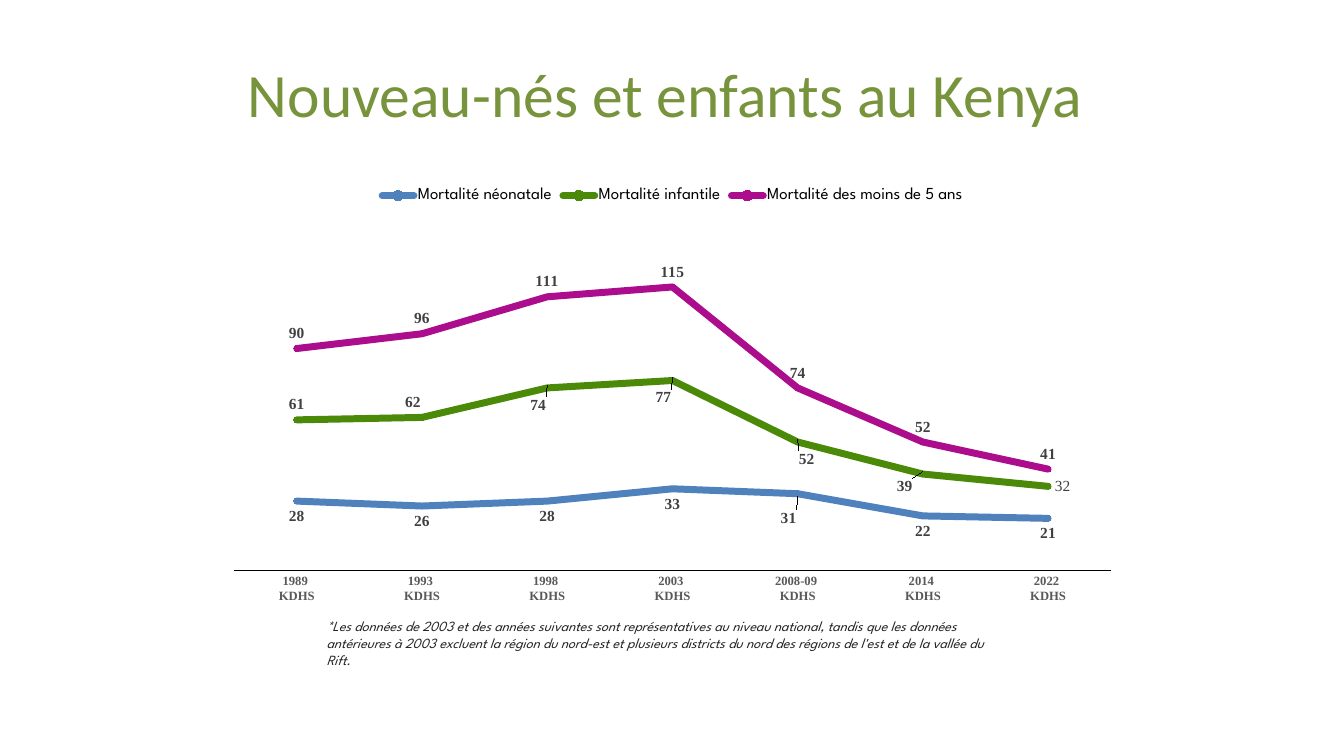
from dataclasses import dataclass, field

from lxml.etree import SubElement
from pptx import Presentation
from pptx.chart.data import CategoryChartData
from pptx.chart.series import LineSeries
from pptx.dml.color import RGBColor
from pptx.enum.chart import (
    XL_CHART_TYPE, XL_LABEL_POSITION, XL_LEGEND_POSITION, XL_MARKER_STYLE, XL_TICK_MARK,
)
from pptx.enum.text import MSO_ANCHOR, PP_ALIGN
from pptx.oxml import parse_xml
from pptx.oxml.ns import nsdecls, qn
from pptx.text.text import Font, TextFrame
from pptx.util import Inches, Pt

BLACK = RGBColor(0x00, 0x00, 0x00)
TITLE_GREEN = RGBColor(0x77, 0x93, 0x3C)
NOTE_GREY = RGBColor(0x24, 0x24, 0x24)
LABEL_GREY = RGBColor(0x40, 0x40, 0x40)
AXIS_GREY = RGBColor(0x59, 0x59, 0x59)
BLUE = RGBColor(0x4F, 0x81, 0xBD)
GREEN = RGBColor(0x4B, 0x8A, 0x08)
PURPLE = RGBColor(0xAB, 0x0D, 0x8D)

SANS = "League Spartan"
SERIF = "Times New Roman"
SURVEY_YEARS = ("1989", "1993", "1998", "2003", "2008-09", "2014", "2022")
FOOTNOTE = (
    "*Les données de 2003 et des années suivantes sont représentatives au niveau national, "
    "tandis que les données antérieures à 2003 excluent la région du nord-est et plusieurs "
    "districts du nord des régions de l'est et de la vallée du Rift."
)


@dataclass(frozen=True)
class MortalityRate:
    """One line; label_shifts moves a point's label by fractions of the chart."""

    name: str
    values: tuple[int, ...]
    color: RGBColor
    label_position: XL_LABEL_POSITION
    label_shifts: dict[int, tuple[float, float]] = field(default_factory=dict)


RATES = (
    MortalityRate("Mortalité néonatale", (28, 26, 28, 33, 31, 22, 21), BLUE,
                  XL_LABEL_POSITION.BELOW, {4: (-0.01, 0.02)}),
    MortalityRate("Mortalité infantile", (61, 62, 74, 77, 52, 39, 34), GREEN,
                  XL_LABEL_POSITION.ABOVE,
                  {1: (-0.01, 0), 2: (-0.01, 0.07), 3: (-0.01, 0.07),
                   4: (0.01, 0.07), 5: (-0.02, 0.06)}),
    MortalityRate("Mortalité des moins de 5 ans", (90, 96, 111, 115, 74, 52, 41), PURPLE,
                  XL_LABEL_POSITION.ABOVE),
)


def format_font(font: Font, name: str, size: float, color: RGBColor,
                bold: bool = False, italic: bool = False) -> None:
    font.name = name
    font.size = Pt(size)
    font.color.rgb = color
    font.bold = bold
    font.italic = italic


def write_text(text_frame: TextFrame, text: str, *, font: str, size: float, color: RGBColor,
               italic: bool = False, alignment: PP_ALIGN = PP_ALIGN.LEFT) -> None:
    paragraph = text_frame.paragraphs[0]
    paragraph.alignment = alignment
    run = paragraph.add_run()
    run.text = text
    format_font(run.font, font, size, color, italic=italic)


def add_layout(parent, index: int, **settings: object) -> None:
    """Give a chart element a manual layout, replacing any earlier one."""
    for earlier in parent.findall(qn("c:layout")):
        parent.remove(earlier)
    layout = parse_xml(f"<c:layout {nsdecls('c')}><c:manualLayout/></c:layout>")
    for tag, value in settings.items():
        SubElement(layout[0], qn(f"c:{tag}")).set("val", str(value))
    parent.insert(index, layout)


def style_series(series: LineSeries, rate: MortalityRate) -> None:
    series.smooth = False
    series.format.line.color.rgb = rate.color
    series.format.line.width = Pt(5)
    series.format.line._ln.set("cap", "rnd")
    series.marker.style = XL_MARKER_STYLE.CIRCLE
    series.marker.size = 4
    series.marker.format.fill.solid()
    series.marker.format.fill.fore_color.rgb = rate.color
    series.marker.format.line.color.rgb = rate.color

    labels = series.data_labels
    labels.show_value = True
    labels.position = rate.label_position
    format_font(labels.font, SERIF, 11, LABEL_GREY, bold=True)
    for point, (shift_x, shift_y) in rate.label_shifts.items():
        label = series.points[point].data_label
        label.position = rate.label_position
        format_font(label.font, SERIF, 11, LABEL_GREY, bold=True)
        element = series._element.xpath(f"c:dLbls/c:dLbl[c:idx/@val='{point}']")[0]
        add_layout(element, 1, x=shift_x, y=shift_y)


def add_mortality_chart(slide) -> None:
    data = CategoryChartData()
    data.categories = [f"{year} \nKDHS" for year in SURVEY_YEARS]
    for rate in RATES:
        data.add_series(rate.name, rate.values)
    chart = slide.shapes.add_chart(
        XL_CHART_TYPE.LINE_MARKERS, Inches(2.17), Inches(1.75), Inches(9), Inches(4.58), data
    ).chart
    format_font(chart.font, SANS, 18, BLACK)
    chart.has_title = False
    chart.has_legend = True
    chart.legend.position = XL_LEGEND_POSITION.TOP
    chart.legend.include_in_layout = False
    format_font(chart.legend.font, SANS, 12, BLACK)

    value_axis = chart.value_axis
    value_axis.visible = False
    value_axis.has_major_gridlines = False
    value_axis.minimum_scale = 0
    value_axis.maximum_scale = 150
    category_axis = chart.category_axis
    category_axis.major_tick_mark = XL_TICK_MARK.NONE
    category_axis.format.line.color.rgb = BLACK
    category_axis.format.line.width = Pt(0.75)
    format_font(category_axis.tick_labels.font, SERIF, 9, AXIS_GREY, bold=True)

    plot = chart.plots[0]
    plot.vary_by_categories = False
    for series, rate in zip(plot.series, RATES):
        style_series(series, rate)
    latest_infant_label = plot.series[1].points[6].data_label
    write_text(latest_infant_label.text_frame, "32", font=SERIF, size=11, color=LABEL_GREY)
    latest_infant_label.position = XL_LABEL_POSITION.RIGHT

    plot_area = chart._chartSpace.find(f".//{qn('c:plotArea')}")
    add_layout(plot_area, 0, layoutTarget="inner", xMode="edge", yMode="edge",
               x=0.017, y=0.053, w=0.966, h=0.8)


def main() -> None:
    presentation = Presentation()
    presentation.slide_width = Inches(13.33)
    presentation.slide_height = Inches(7.5)
    slide = presentation.slides.add_slide(presentation.slide_layouts[5])

    title = slide.shapes.title
    title.left, title.top = Inches(0.67), Inches(0.3)
    title.width, title.height = Inches(12), Inches(1.25)
    title.text_frame.vertical_anchor = MSO_ANCHOR.MIDDLE
    write_text(title.text_frame, "Nouveau-nés et enfants au Kenya ", font="Calibri",
               size=44, color=TITLE_GREEN, alignment=PP_ALIGN.CENTER)

    add_mortality_chart(slide)

    footnote = slide.shapes.add_textbox(Inches(3.14), Inches(6.08), Inches(6.88), Inches(0.45))
    footnote.text_frame.word_wrap = True
    write_text(footnote.text_frame, FOOTNOTE, font=SANS, size=10, color=NOTE_GREY, italic=True)

    presentation.save("out.pptx")


if __name__ == "__main__":
    main()
